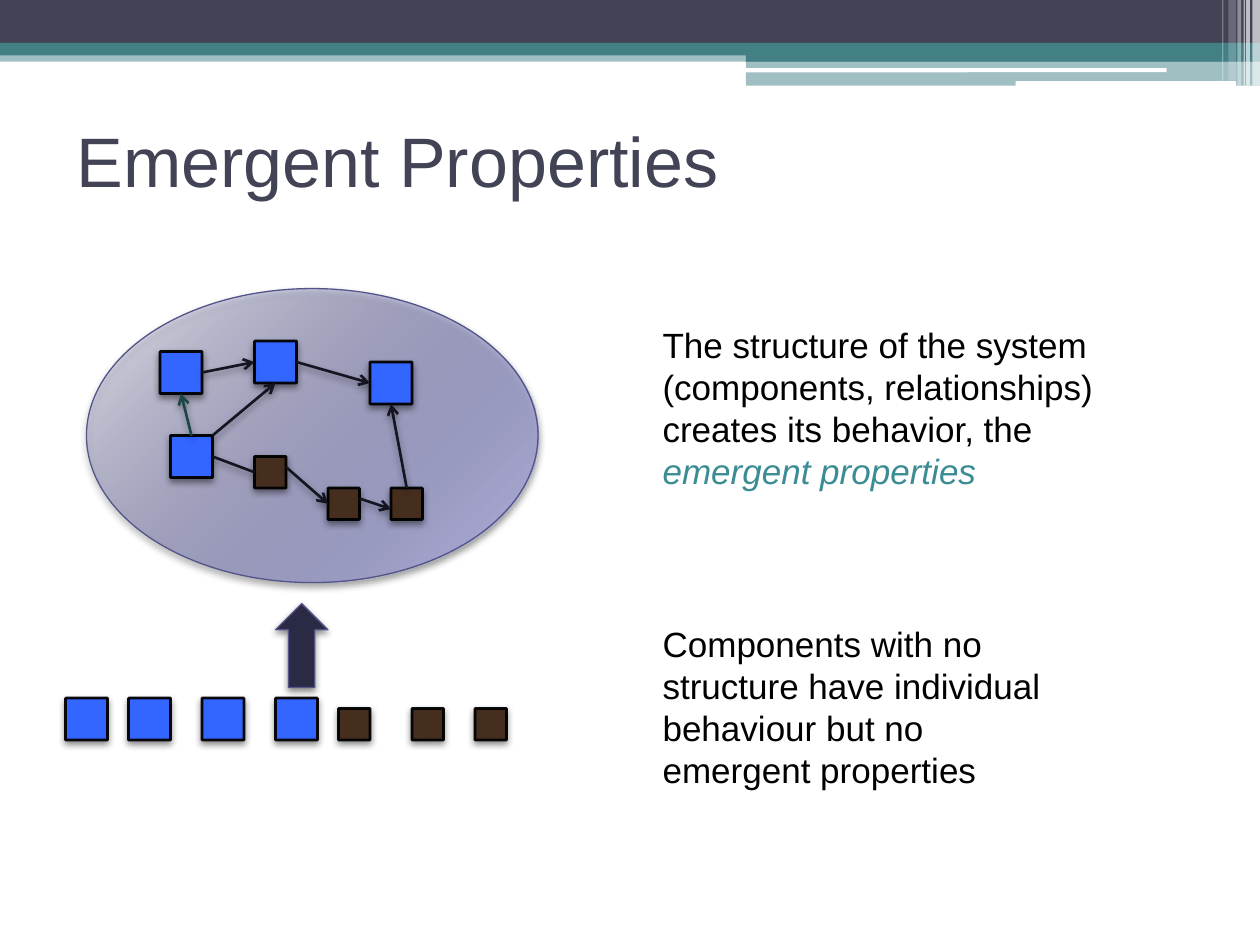
from lxml import etree
from pptx import Presentation
from pptx.dml.color import RGBColor
from pptx.enum.shapes import MSO_CONNECTOR, MSO_SHAPE
from pptx.enum.text import MSO_ANCHOR, MSO_AUTO_SIZE, PP_ALIGN
from pptx.oxml.ns import qn
from pptx.util import Inches, Pt

RECT, ROUND = MSO_SHAPE.RECTANGLE, MSO_SHAPE.ROUNDED_RECTANGLE
OVAL, ARROW = MSO_SHAPE.OVAL, MSO_SHAPE.UP_ARROW
STRAIGHT = MSO_CONNECTOR.STRAIGHT
MIDDLE, TOP, LEFT = MSO_ANCHOR.MIDDLE, MSO_ANCHOR.TOP, PP_ALIGN.LEFT
FIT, FIXED = MSO_AUTO_SIZE.SHAPE_TO_FIT_TEXT, MSO_AUTO_SIZE.NONE

SLATE = RGBColor(0x42, 0x44, 0x56)
TEAL = RGBColor(0x43, 0x80, 0x86)
WHITE = RGBColor(0xFF, 0xFF, 0xFF)
BLACK = RGBColor(0, 0, 0)
BLUE = RGBColor(0x33, 0x66, 0xFF)
BROWN = RGBColor(0x46, 0x2E, 0x1F)
DARK = RGBColor(0x15, 0x15, 0x22)
PINE = RGBColor(0x1E, 0x46, 0x49)
SEA = RGBColor(0x3C, 0x8C, 0x93)
NAVY = RGBColor(0x2A, 0x2A, 0x45)
EDGE = RGBColor(0x53, 0x54, 0x8A)
INDIGO = RGBColor(0x4B, 0x4C, 0x92)
LILAC = RGBColor(0xB3, 0xB3, 0xDF)

BIG, SMALL = 4, 3


def node(parent, tag, **attrs):
    item = etree.SubElement(parent, qn(tag))
    for key, value in attrs.items():
        item.set(key, str(value))
    return item


def fade(part, share):
    color = next(part.iter(qn("a:srgbClr")))
    node(color, "a:alpha", val=share * 1000)


def write(frame, *parts, size=20, color=BLACK, accent=SEA, anchor=TOP, fit=FIT):
    frame.word_wrap = True
    frame.auto_size = fit
    frame.vertical_anchor = anchor
    line = frame.paragraphs[0]
    line.alignment = LEFT
    for place, words in enumerate(parts):
        run = line.add_run()
        run.text = words
        run.font.name = "Arial"
        run.font.size = Pt(size)
        run.font.italic = place > 0
        run.font.color.rgb = accent if place else color


class Board:
    left, top, cell = 0.52, 2.29, 1 / 12

    def __init__(self, deck):
        self.wide, self.high = deck.slide_width, deck.slide_height
        self.slide = deck.slides.add_slide(deck.slide_layouts[5])
        self.shapes = self.slide.shapes

    def share(self, x, y, w, h):
        return [int(part * full / 100) for part, full in
                zip((x, y, w, h), (self.wide, self.high) * 2)]

    def point(self, col, row):
        return (Inches(self.left + col * self.cell),
                Inches(self.top + row * self.cell))

    def title(self, words, *box):
        head = self.shapes.title
        head.left, head.top, head.width, head.height = self.share(*box)
        write(head.text_frame, words, size=40, color=SLATE, anchor=MIDDLE, fit=FIXED)

    def note(self, box, *parts):
        write(self.shapes.add_textbox(*self.share(*box)).text_frame, *parts)

    def band(self, box, color, alpha=100, kind=RECT):
        band = self.shapes.add_shape(kind, *self.share(*box))
        band.shadow.inherit = False
        band.fill.solid()
        band.fill.fore_color.rgb = color
        band.line.fill.background()
        if alpha < 100:
            fade(band._element.spPr, alpha)

    def shade(self, effects, alpha, blur):
        cast = node(effects, "a:outerShdw", blurRad=Pt(blur), dist=Pt(2),
                    dir=5400000, rotWithShape=0)
        node(cast, "a:srgbClr", val=BLACK)
        fade(cast, alpha)

    def form(self, kind, col, row, cols, rows, fill, edge=EDGE, width=0.75):
        size = [Inches(count * self.cell) for count in (cols, rows)]
        form = self.shapes.add_shape(kind, *self.point(col, row), *size)
        form.shadow.inherit = False
        form.fill.solid()
        form.fill.fore_color.rgb = fill
        form.line.color.rgb = edge
        form.line.width = Pt(width)
        self.shade(form._element.spPr.find(qn("a:effectLst")), 45, 4)
        return form

    def system(self, *box):
        oval = self.form(OVAL, *box, LILAC)
        oval.fill.gradient()
        oval.fill.gradient_angle = 315
        for stop, color in zip(oval.fill.gradient_stops, (INDIGO, LILAC)):
            stop.color.rgb = color
        oval.fill.gradient_stops[0].position = 0
        oval.fill.gradient_stops[1].position = 1
        fade(oval._element.spPr.find(qn("a:gradFill")), 10)

    def block(self, col, row, side):
        color = BLUE if side == BIG else BROWN
        block = self.form(RECT, col, row, side, side, color, BLACK, 1.5)
        fade(block._element.spPr.find(qn("a:ln")), 95)

    def link(self, start, end, color=DARK, head=True):
        link = self.shapes.add_connector(STRAIGHT, *self.point(*start), *self.point(*end))
        link.line.color.rgb = color
        link.line.width = Pt(1.5)
        props = link._element.spPr
        if head:
            node(props.find(qn("a:ln")), "a:tailEnd", type="arrow")
        self.shade(node(props, "a:effectLst"), 40, 4.1)


def main():
    deck = Presentation()
    deck.slide_width, deck.slide_height = Inches(10), Inches(7.5)
    board = Board(deck)

    board.band((0, 5.33, 100, 1.2), TEAL, 50)
    board.band((0, 0, 100, 4.53), SLATE)
    board.band((0, 4.53, 100, 1.33), TEAL)
    board.band((59.2, 5.2, 40.8, 1.33), TEAL)
    board.band((59.2, 6.4, 40.8, 2.67), TEAL, 50)
    board.band((59.1, 7.2, 33.5, 0.45), WHITE, kind=ROUND)
    board.band((80.6, 8.58, 17.5, 0.5), WHITE, kind=ROUND)
    for x, wide, high, alpha in (
            (99.4, 0.6, 9.07, 65), (98.9, 0.3, 9.07, 65), (98.7, 0.1, 9.07, 60),
            (98.2, 0.3, 9.07, 40), (97.5, 0.6, 8.53, 20), (97, 0.1, 8.53, 30)):
        board.band((x, 0, wide, high), WHITE, alpha)

    board.title("Emergent Properties", 5.1, 9.07, 90, 15.6)

    board.system(2, 0, 43, 28)
    for col, row in ((9, 6), (10, 14), (18, 5), (29, 7)):
        board.block(col, row, BIG)
    for col, row in ((18, 16), (25, 19), (31, 19)):
        board.block(col, row, SMALL)

    board.link((14, 16), (18, 17.5), head=False)
    board.link((12, 14), (11, 10), PINE)
    for start, end in (
            ((22, 7), (29, 9)), ((13, 8), (18, 7)), ((14, 14), (20, 9)),
            ((21, 17), (25, 20.5)), ((28, 20), (31, 21)), ((32.5, 19), (31, 11))):
        board.link(start, end)

    for col in (0, 6, 13, 20):
        board.block(col, 39, BIG)
    for col in (26, 33, 39):
        board.block(col, 40, SMALL)
    board.form(ARROW, 20, 30, 5, 8, NAVY)

    board.note((51.6, 33.6, 36.2, 19.33),
               "The structure of the system (components, relationships) "
               "creates its behavior, the ", "emergent properties")
    board.note((51.6, 65.2, 34.2, 19.33),
               "Components with no structure have individual behaviour "
               "but no emergent properties")
    deck.save("out.pptx")


if __name__ == "__main__":
    main()
